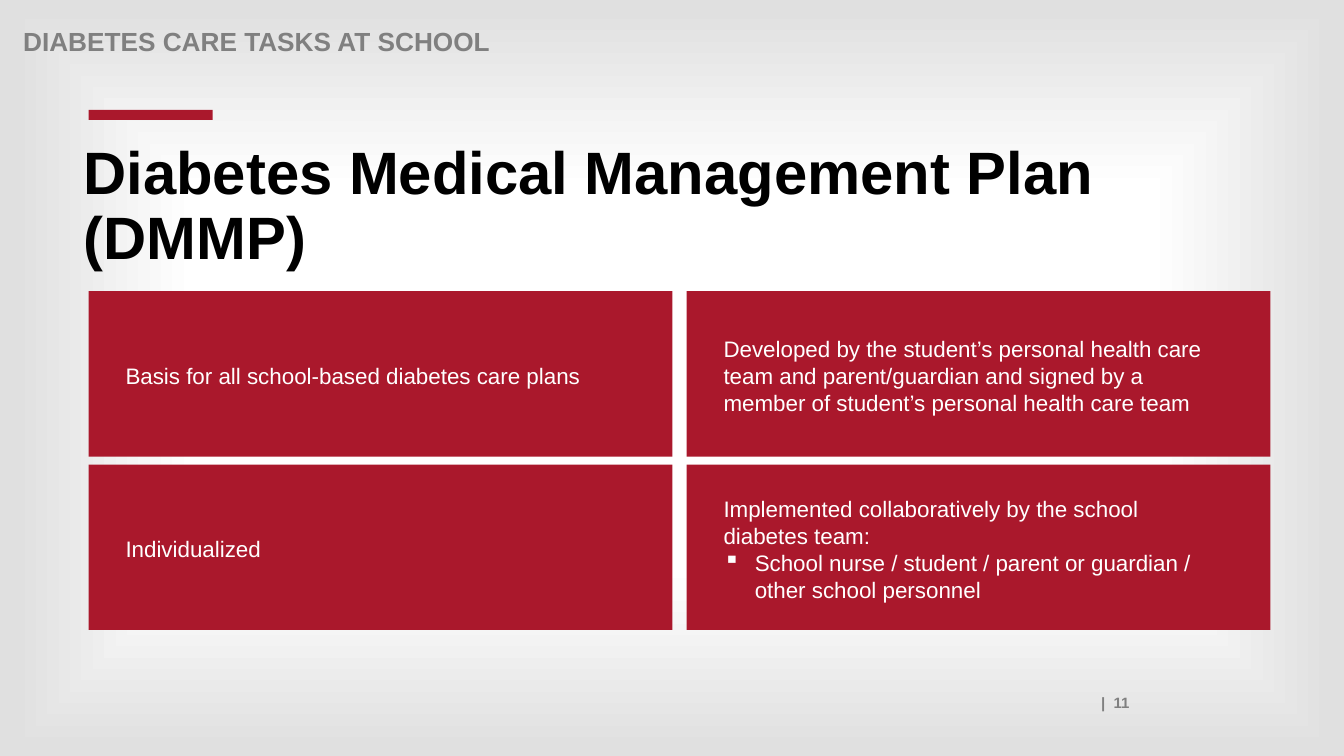
import pptx
import pptx.dml.color
import pptx.enum.shapes
import pptx.enum.text
import pptx.oxml
import pptx.oxml.ns
import pptx.util
from lxml import etree

ALIGN = pptx.enum.text.PP_ALIGN
ANCHOR = pptx.enum.text.MSO_ANCHOR
FIT = pptx.enum.text.MSO_AUTO_SIZE

WIDTH, HEIGHT = pptx.util.Inches(13.33), pptx.util.Inches(7.5)
# The slide is a grid of 100 columns by 100 rows; boxes are (left, top, width, height)
COLUMN, ROW = WIDTH / 100, HEIGHT / 100

CRIMSON, GREY, BLACK, WHITE = "AA182C", "808080", "000000", "FFFFFF"
RUNNING_HEAD = {"size": 18.7, "bold": True, "color": GREY}
HEADLINE = {"size": 42.7, "bold": True, "color": BLACK}
PAGE_NUMBER = {"size": 10.7, "bold": True, "color": GREY}
CARD_TEXT = {"size": 16, "bold": False, "color": WHITE}

LINE_ROWS, PADDING_ROWS = 3.6, 1.35
BULLET = "▪"

# Cards by row, then column: (number of lines, paragraphs)
CARDS = [
    [
        (1, ["Basis for all school-based diabetes care plans"]),
        (3, ["Developed by the student’s personal health care team and "
             "parent/guardian and signed by a member of student’s personal "
             "health care team"]),
    ],
    [
        (1, ["Individualized"]),
        (4, ["Implemented collaboratively by the school diabetes team:",
             BULLET + "School nurse / student / parent or guardian / "
             "other school personnel"]),
    ],
]


def rgb(color):
    return pptx.dml.color.RGBColor.from_string(color)


def place(box):
    left, top, width, height = box
    return [round(length) for length in
            (left * COLUMN, top * ROW, width * COLUMN, height * ROW)]


def add_block(slide, box):
    block = slide.shapes.add_shape(
        pptx.enum.shapes.MSO_SHAPE.RECTANGLE, *place(box))
    block.shadow.inherit = False
    block.fill.solid()
    block.fill.fore_color.rgb = rgb(CRIMSON)
    block.line.fill.background()


def add_bullet(paragraph):
    properties = paragraph._p.get_or_add_pPr()
    indent = pptx.util.Inches(0.31)
    properties.set("marL", str(indent))
    properties.set("indent", str(-indent))
    etree.SubElement(properties, pptx.oxml.ns.qn("a:buChar"), char=BULLET)


def add_text(slide, box, paragraphs, style, frame_format, paragraph_format):
    frame = slide.shapes.add_textbox(*place(box)).text_frame
    for name, value in {"word_wrap": True, **frame_format}.items():
        setattr(frame, name, value)
    for index, words in enumerate(paragraphs):
        paragraph = frame.paragraphs[0] if index == 0 else frame.add_paragraph()
        for name, value in paragraph_format.items():
            setattr(paragraph, name, value)
        if words.startswith(BULLET):
            add_bullet(paragraph)
        run = paragraph.add_run()
        run.text = words.removeprefix(BULLET)
        font_format = {"name": "Arial", "bold": style["bold"],
                       "size": pptx.util.Pt(style["size"])}
        for name, value in font_format.items():
            setattr(run.font, name, value)
        run.font.color.rgb = rgb(style["color"])


def paint_background(slide):
    fill = slide.background.fill
    fill.gradient()
    gradient = slide._element.find(".//" + pptx.oxml.ns.qn("a:gradFill"))
    stops = "".join(
        f'<a:gs pos="{share * 1000}"><a:srgbClr val="{color}"/></a:gs>'
        for share, color in [(12, WHITE), (50, WHITE), (98, "E0E0E0")])
    gradient.getparent().replace(gradient, pptx.oxml.parse_xml(
        f'<a:gradFill {pptx.oxml.ns.nsdecls("a")} rotWithShape="1">'
        f'<a:gsLst>{stops}</a:gsLst><a:path path="shape">'
        '<a:fillToRect l="50000" t="50000" r="50000" b="50000"/>'
        '</a:path></a:gradFill>'))


def add_heading(slide, box):
    left, top, width, height = box
    tight = {"line_spacing": 0.9}
    add_text(slide, (0.98, 3.2, 82.5, 3.73), ["DIABETES CARE TASKS AT SCHOOL"],
             RUNNING_HEAD, {}, tight)
    # Accent bar above the title
    add_block(slide, (left + 1.12, top, 9.23, 1.33))
    add_text(slide, (left, top + 3.74, width, height - 3.74),
             ["Diabetes Medical Management Plan (DMMP)"], HEADLINE, {}, tight)


def add_cards(slide, box):
    left, top, width, height = box
    gap = 1.06
    card_width, card_height = (width - gap) / 2, (height - gap) / 2
    for row, cards in enumerate(CARDS):
        for column, (lines, paragraphs) in enumerate(cards):
            card_left = left + column * (card_width + gap)
            card_top = top + row * (card_height + gap)
            add_block(slide, (card_left, card_top, card_width, card_height))
            # Label centred on the height of its card
            label_height = lines * LINE_ROWS + PADDING_ROWS
            label_top = card_top + (card_height - label_height) / 2 + 0.2
            add_text(slide, (card_left + 2, label_top, 38.6, label_height),
                     paragraphs, CARD_TEXT,
                     {"vertical_anchor": ANCHOR.MIDDLE,
                      "auto_size": FIT.SHAPE_TO_FIT_TEXT}, {})


def add_page_number(slide, box):
    add_text(slide, box, ["|  11"], PAGE_NUMBER,
             {"auto_size": FIT.SHAPE_TO_FIT_TEXT}, {"alignment": ALIGN.RIGHT})


def main():
    deck = pptx.Presentation()
    deck.slide_width, deck.slide_height = WIDTH, HEIGHT
    slide = deck.slides.add_slide(deck.slide_layouts[6])
    paint_background(slide)
    add_page_number(slide, (9.08, 91.07, 75.69, 3.73))
    add_heading(slide, (5.48, 14.53, 86.57, 21.07))
    add_cards(slide, (6.6, 38.53, 87.93, 44.8))
    deck.save("out.pptx")


if __name__ == "__main__":
    main()
